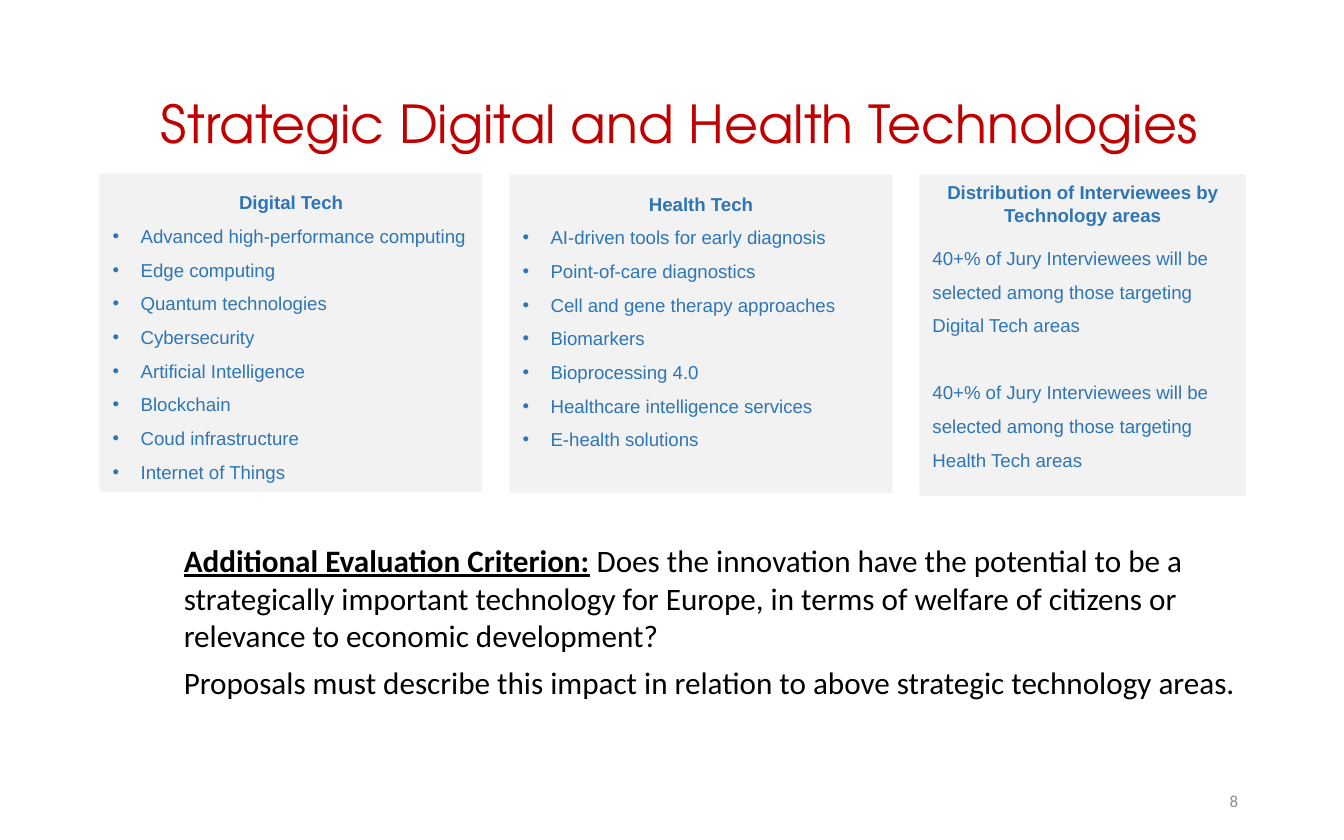
from pptx import Presentation
from pptx import util as u
from pptx.dml.color import RGBColor
from pptx.enum import shapes, text
from pptx.oxml import parse_xml
from pptx.oxml.ns import nsdecls

Pt = u.Pt
RED = RGBColor(0xC0, 0x00, 0x00)
BLUE = RGBColor(0x2E, 0x75, 0xB6)
BLACK = RGBColor(0x00, 0x00, 0x00)
GREY = RGBColor(0x8C, 0x8C, 0x8C)
PANEL_FILL = RGBColor(0xF2, 0xF2, 0xF2)
ALIGN = text.PP_ALIGN
ANCHOR = text.MSO_ANCHOR

BULLET_INDENT = Pt(15)
PANEL_LEFT, PANEL_GAP = 53.3, 14.4
LIST_SPACING = 1.5

DIGITAL = ["Advanced high-performance computing", "Edge computing",
           "Quantum technologies", "Cybersecurity", "Artificial Intelligence",
           "Blockchain", "Coud infrastructure", "Internet of Things"]
HEALTH = ["AI-driven tools for early diagnosis", "Point-of-care diagnostics",
          "Cell and gene therapy approaches", "Biomarkers",
          "Bioprocessing 4.0", "Healthcare intelligence services",
          "E-health solutions"]
SHARES = [f"40+% of Jury Interviewees will be selected among those targeting {area} areas"
          for area in ("Digital Tech", "Health Tech")]


def add_run(paragraph, words, size, font, color, bold=False, underline=False):
    run = paragraph.add_run()
    run.text = words
    run.font.size = Pt(size)
    run.font.name = font
    run.font.color.rgb = color
    run.font.bold = bold
    run.font.underline = underline


def add_text_frame(slide, left, top, width, height, anchor=ANCHOR.TOP):
    box = slide.shapes.add_textbox(Pt(left), Pt(top), Pt(width), Pt(height))
    frame = box.text_frame
    frame.word_wrap = True
    frame.vertical_anchor = anchor
    return frame


def add_bullet(paragraph):
    properties = paragraph._p.get_or_add_pPr()
    properties.set("marL", str(BULLET_INDENT))
    properties.set("indent", str(-BULLET_INDENT))
    properties.append(parse_xml(f'<a:buFont {nsdecls("a")} typeface="Arial"/>'))
    properties.append(parse_xml(f'<a:buChar {nsdecls("a")} char="•"/>'))


def add_panel(slide, left, top, width, height, heading):
    panel = slide.shapes.add_shape(shapes.MSO_SHAPE.RECTANGLE,
                                   Pt(left), Pt(top), Pt(width), Pt(height))
    panel.shadow.inherit = False
    panel.fill.solid()
    panel.fill.fore_color.rgb = PANEL_FILL
    panel.line.fill.background()
    frame = panel.text_frame
    frame.word_wrap = True
    frame.vertical_anchor = ANCHOR.TOP
    title = frame.paragraphs[0]
    title.alignment = ALIGN.CENTER
    add_run(title, heading, 10, "Arial", BLUE, bold=True)
    return frame


def add_panel_line(frame, words):
    line = frame.add_paragraph()
    line.alignment = ALIGN.LEFT
    line.line_spacing = LIST_SPACING
    add_run(line, words, 10, "Arial", BLUE)
    return line


def add_technology_panel(slide, left, top, width, heading, items):
    frame = add_panel(slide, left, top, width, 170.6, heading)
    frame.paragraphs[0].line_spacing = LIST_SPACING
    for item in items:
        add_bullet(add_panel_line(frame, item))


def add_distribution_panel(slide, left, top):
    frame = add_panel(slide, left, top, 175, 172,
                      "Distribution of Interviewees by Technology areas")
    frame.paragraphs[0].space_after = Pt(5)
    lines = [add_panel_line(frame, share) for share in SHARES]
    lines[-1].space_before = Pt(18)


def add_criterion(slide):
    frame = add_text_frame(slide, 91.4, 286.6, 583.2, 92.9)
    question = frame.paragraphs[0]
    add_run(question, "Additional Evaluation Criterion:", 16.7, "Calibri", BLACK,
            bold=True, underline=True)
    add_run(question, " Does the innovation have the potential to be a strategically "
            "important technology for Europe, in terms of welfare of citizens or "
            "relevance to economic development?", 16.7, "Calibri", BLACK)
    requirement = frame.add_paragraph()
    add_run(requirement, "Proposals must describe this impact in relation to above "
            "strategic technology areas.", 16.7, "Calibri", BLACK)
    for paragraph in (question, requirement):
        paragraph.space_after = Pt(5)


def main():
    deck = Presentation()
    deck.slide_width, deck.slide_height = Pt(720), Pt(450)
    slide = deck.slides.add_slide(deck.slide_layouts[6])

    # Title
    title = add_text_frame(slide, 57.6, 46, 612.7, 44, ANCHOR.MIDDLE).paragraphs[0]
    title.alignment = ALIGN.CENTER
    title.line_spacing = 0.9
    add_run(title, "Strategic Digital and Health Technologies", 28,
            "TeX Gyre Adventor", RED)

    # Evaluation criterion
    add_criterion(slide)

    # Technology panels, then the distribution panel to their right
    width = 205.2
    step = width + PANEL_GAP
    add_technology_panel(slide, PANEL_LEFT, 92.9, width, "Digital Tech", DIGITAL)
    add_technology_panel(slide, PANEL_LEFT + step, 93.6, width, "Health Tech", HEALTH)
    add_distribution_panel(slide, PANEL_LEFT + 2 * step, 93.6)

    # Slide number
    number = add_text_frame(slide, 508.3, 416.9, 162, 23.8, ANCHOR.MIDDLE).paragraphs[0]
    number.alignment = ALIGN.RIGHT
    add_run(number, "8", 9, "Calibri", GREY)

    deck.save("out.pptx")


if __name__ == "__main__":
    main()
